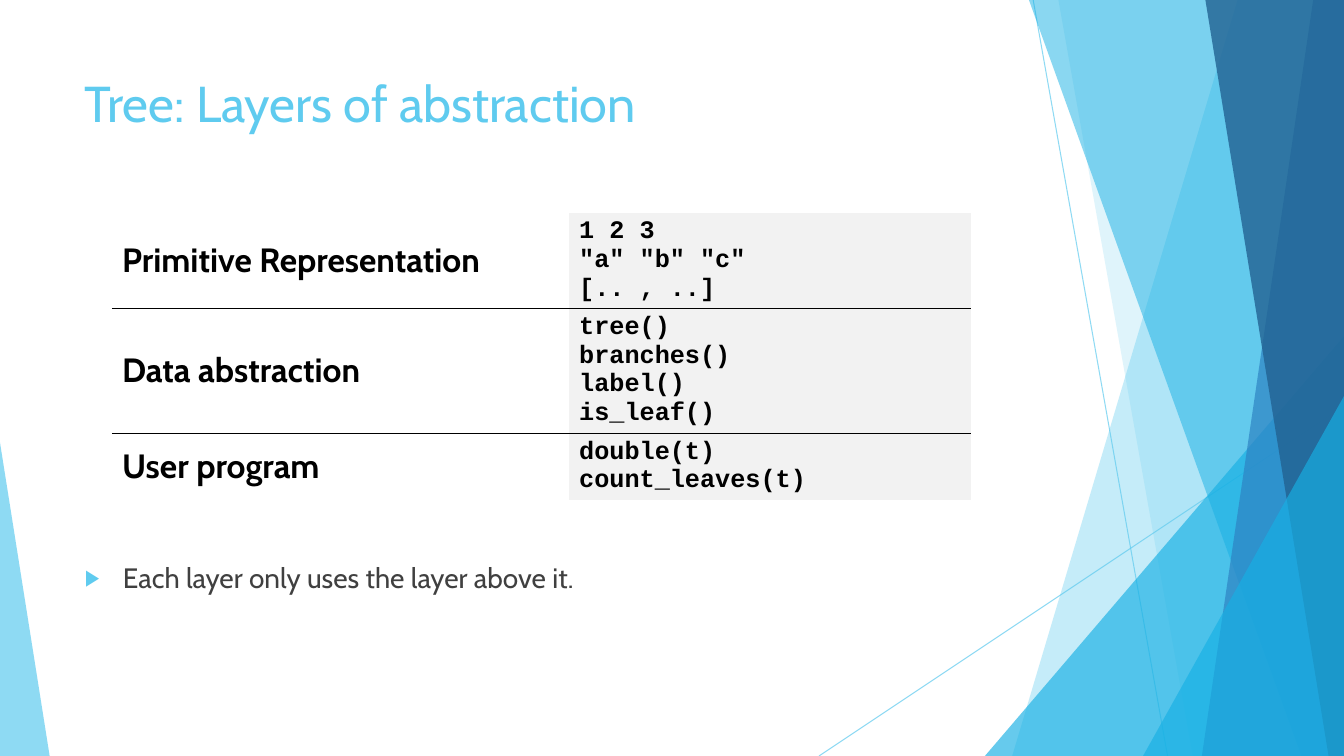
from lxml.etree import SubElement
from pptx import Presentation
from pptx.dml.color import RGBColor
from pptx.enum.shapes import MSO_CONNECTOR, MSO_SHAPE
from pptx.enum.text import MSO_ANCHOR, MSO_AUTO_SIZE, PP_ALIGN
from pptx.oxml.ns import qn
from pptx.util import Pt


def paint(color_format, hex_color):
    color_format.rgb = RGBColor.from_string(hex_color)


def fade(element, percent):
    color = next(element.iter(qn("a:srgbClr")))
    SubElement(color, qn("a:alpha"), val=str(percent * 1000))


WIDTH, HEIGHT = 960, 540
SKY, CYAN, BLUE, NAVY = "5FCBEF", "17B0E4", "2E83C3", "226292"

prs = Presentation()
prs.slide_width, prs.slide_height = Pt(WIDTH), Pt(HEIGHT)
slide = prs.slides.add_slide(prs.slide_layouts[1])
shapes = slide.shapes

for start_x, start_y, end_x in [(738, 0, 834), (WIDTH, 290, 585)]:
    ray = shapes.add_connector(
        MSO_CONNECTOR.STRAIGHT, Pt(start_x), Pt(start_y), Pt(end_x), Pt(HEIGHT)
    )
    ray.line.width = Pt(0.75)
    paint(ray.line.color, SKY)
    fade(ray.line._ln, 70)
    SubElement(ray._element.spPr, qn("a:effectLst"))

facets = [
    (884, 723, 0, SKY, 36),
    (756, 852, 0, SKY, 20),
    (WIDTH, 703.5, 240, CYAN, 66),
    (735, 929.5, 0, CYAN, 50),
    (938, 858.5, 0, BLUE, 70),
    (861, 949, 0, NAVY, 80),
    (WIDTH, 816.5, 283, CYAN, 66),
    (0, 35.5, 316, SKY, 70),
]
for top_x, bottom_x, top, color, opacity in facets:
    if top == 0:
        outline = shapes.build_freeform(Pt(top_x), 0)
        outline.add_line_segments(
            [(Pt(x), Pt(y)) for x, y in [(WIDTH, 0), (WIDTH, HEIGHT), (bottom_x, HEIGHT)]]
        )
        facet = outline.convert_to_shape()
    else:
        facet = shapes.add_shape(
            MSO_SHAPE.ISOSCELES_TRIANGLE,
            Pt(min(top_x, bottom_x)), Pt(top), Pt(abs(top_x - bottom_x)), Pt(HEIGHT - top),
        )
        facet.adjustments[0] = 1 if top_x > bottom_x else 0
    facet.shadow.inherit = False
    facet.line.fill.background()
    facet.fill.solid()
    paint(facet.fill.fore_color, color)
    fade(facet._element.spPr, opacity)

title, rule = shapes.title, slide.placeholders[1]
for holder, top, height, words, size, color in [
    (title, 48, 104, "Tree: Layers of abstraction", 36, SKY),
    (rule, 397, 79, "Each layer only uses the layer above it.", 20, "404040"),
]:
    holder.left, holder.top, holder.width, holder.height = Pt(53.5), Pt(top), Pt(677), Pt(height)
    frame = holder.text_frame
    frame.text = words
    frame.word_wrap = True
    frame.auto_size = MSO_AUTO_SIZE.NONE
    frame.vertical_anchor = MSO_ANCHOR.TOP
    paragraph = frame.paragraphs[0]
    paragraph.alignment = PP_ALIGN.LEFT
    paragraph.font.name = "Cabin"
    paragraph.font.size = Pt(size)
    paint(paragraph.font.color, color)

rule_line = rule.text_frame.paragraphs[0]
rule_line.space_before = Pt(10)
bullet = rule_line._p.get_or_add_pPr()
bullet.set("marL", str(Pt(27)))
bullet.set("indent", str(-Pt(27)))
bullet_color = SubElement(bullet, qn("a:buClr"))
SubElement(bullet_color, qn("a:srgbClr"), val=SKY)
SubElement(bullet, qn("a:buSzPct"), val="80000")
SubElement(bullet, qn("a:buChar"), char="▶")
bullet.append(bullet.find(qn("a:defRPr")))

layers = [
    ("Primitive Representation", '1 2 3\n"a" "b" "c"\n[.. , ..]', 68),
    ("Data abstraction", "tree()\nbranches()\nlabel()\nis_leaf()", 89),
    ("User program", "double(t)\ncount_leaves(t)", 48),
]
table = shapes.add_table(
    len(layers), 2, Pt(80), Pt(152), Pt(613.5), Pt(sum(layer[2] for layer in layers))
).table
table.first_row = table.horz_banding = False
table.columns[0].width, table.columns[1].width = Pt(326.5), Pt(287)

for row, (layer_name, code, height) in enumerate(layers):
    table.rows[row].height = Pt(height)
    for column, (words, font_name, size) in enumerate(
        [(layer_name, "Cabin", 24), (code, "Courier New", 18)]
    ):
        cell = table.cell(row, column)
        cell.text = words
        cell.vertical_anchor = MSO_ANCHOR.MIDDLE
        for paragraph in cell.text_frame.paragraphs:
            paragraph.font.name = font_name
            paragraph.font.size = Pt(size)
            paragraph.font.bold = True
            paint(paragraph.font.color, "000000")

        borders = cell._tc.get_or_add_tcPr()
        for side, ruled in [
            ("a:lnL", False),
            ("a:lnR", False),
            ("a:lnT", row > 0),
            ("a:lnB", row < len(layers) - 1),
        ]:
            border = SubElement(borders, qn(side), w=str(Pt(1)))
            if ruled:
                border_fill = SubElement(border, qn("a:solidFill"))
                SubElement(border_fill, qn("a:srgbClr"), val="000000")
            else:
                SubElement(border, qn("a:noFill"))

        if column == 1:
            cell.fill.solid()
            paint(cell.fill.fore_color, "F2F2F2")
        else:
            cell.fill.background()

prs.save("out.pptx")
